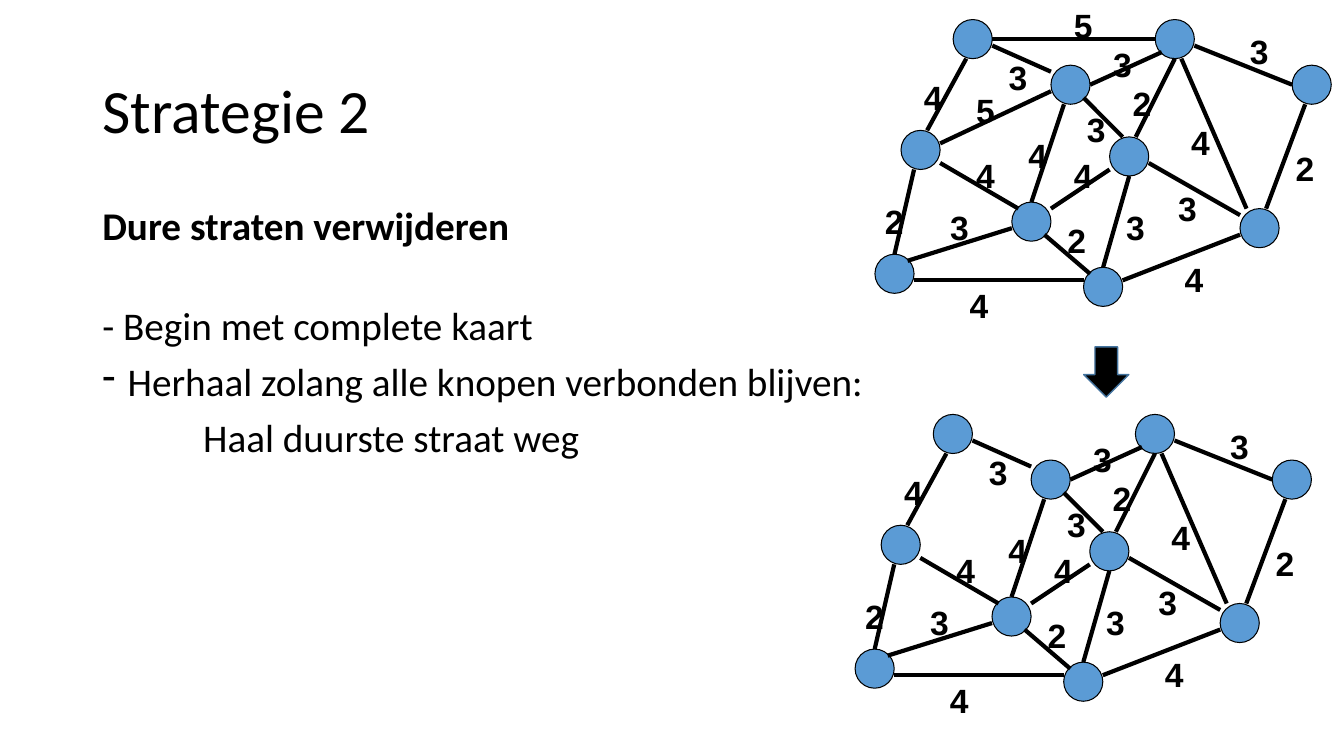
from lxml import etree
from pptx import Presentation
from pptx import util as u
from pptx.dml.color import RGBColor
from pptx.enum import shapes, text
from pptx.oxml import ns

BLACK = RGBColor(0x00, 0x00, 0x00)
BLUE = RGBColor(0x5B, 0x9B, 0xD5)
DARK_BLUE = RGBColor(0x43, 0x73, 0x9E)

UNIT = 11.5 / 70
NODE_SIZE = 6
LABEL_HEIGHT = 1.27
HIGHEST_COST = 5

NODES = [(12, 3), (43, 3), (64, 10), (36, 21), (27, 10),
         (4, 20), (0, 39), (21, 31), (32, 41), (56, 32)]

STREETS = [
    (3, (5, 40), (21, 35), (10, 31)),
    (4, (8, 20), (14, 9), (6, 11)),
    (2, (6, 26), (3, 39), (0, 30)),
    (4, (6, 43), (32, 43), (13, 43)),
    (2, (26, 36), (33, 42), (28, 33)),
    (5, (10, 22), (27, 14), (14, 13)),
    (3, (18, 7), (27, 11), (19, 8)),
    (5, (18, 6), (43, 6), (29, 0)),
    (3, (49, 7), (64, 13), (56, 4)),
    (3, (33, 13), (44, 8), (35, 6)),
    (4, (29, 16), (24, 31), (22, 20)),
    (4, (10, 25), (22, 32), (14, 23)),
    (3, (32, 15), (38, 21), (31, 16)),
    (4, (27, 32), (36, 26), (29, 23)),
    (3, (39, 27), (35, 41), (37, 31)),
    (4, (38, 43), (56, 36), (46, 39)),
    (3, (42, 25), (56, 33), (45, 28)),
    (4, (47, 9), (57, 32), (47, 18)),
    (2, (66, 16), (60, 32), (63, 22)),
    (2, (46, 9), (40, 21), (38, 12)),
]


def apply(target, values):
    for name, value in values.items():
        setattr(target, name, value)


class StrategySlide:
    title_font = {"name": "Calibri", "size": u.Pt(44)}
    body_font = {"name": "Calibri", "size": u.Pt(28)}
    label_font = {"name": "Arial", "size": u.Pt(24), "bold": True}
    label_frame = {"word_wrap": False, "auto_size": text.MSO_AUTO_SIZE.SHAPE_TO_FIT_TEXT}

    def __init__(self, page):
        self.page = page

    def text_box(self, parent, left, top, width, height, frame_format):
        box = parent.add_textbox(u.Cm(left), u.Cm(top), u.Cm(width), u.Cm(height))
        apply(box.text_frame, frame_format)
        return box.text_frame

    def fill_para(self, para, words, font, spacing=None, margin=0, bullet=None):
        apply(para, spacing or {})
        span = para.add_run()
        span.text = words
        apply(span.font, font)
        span.font.color.rgb = BLACK
        properties = para._p.get_or_add_pPr()
        properties.set("marL", str(u.Cm(margin)))
        properties.set("indent", str(-u.Cm(margin) if bullet else 0))
        if bullet:
            etree.SubElement(properties, ns.qn("a:buChar")).set("char", bullet)

    def shape(self, parent, kind, left, top, width, height, fill, line, weight):
        shape = parent.add_shape(kind, u.Cm(left), u.Cm(top), u.Cm(width), u.Cm(height))
        shape.shadow.inherit = False
        shape.fill.solid()
        shape.fill.fore_color.rgb = fill
        shape.line.color.rgb = line
        shape.line.width = u.Pt(weight)

    def street(self, parent, start, end):
        ends = [u.Cm(value) for value in (*start, *end)]
        street = parent.add_connector(shapes.MSO_CONNECTOR.STRAIGHT, *ends)
        street.line.color.rgb = BLACK
        street.line.width = u.Pt(3)
        etree.SubElement(street.element.spPr, ns.qn("a:effectLst"))

    def street_map(self, left, top, streets):
        def place(point):
            return left + point[0] * UNIT, top + point[1] * UNIT

        parent = self.page.shapes.add_group_shape().shapes
        size = NODE_SIZE * UNIT
        for node in NODES:
            self.shape(parent, shapes.MSO_SHAPE.OVAL, *place(node), size, size,
                       BLUE, BLACK, 0.75)
        for cost, start, end, label in streets:
            self.street(parent, place(start), place(end))
        for cost, start, end, label in streets:
            frame = self.text_box(parent, *place(label), size, LABEL_HEIGHT, self.label_frame)
            self.fill_para(frame.paragraphs[0], str(cost), self.label_font)

    def title(self, words):
        frame = self.text_box(self.page.shapes, 2.33, 1.02, 29.21, 3.68, {
            "word_wrap": True, "vertical_anchor": text.MSO_ANCHOR.MIDDLE})
        self.fill_para(frame.paragraphs[0], words, self.title_font, {"line_spacing": 0.9})

    def body(self, lines):
        frame = self.text_box(self.page.shapes, 2.33, 5.08, 29.21, 12.09, {"word_wrap": True})
        for index, (words, bold, before, margin, bullet) in enumerate(lines):
            para = frame.add_paragraph() if index else frame.paragraphs[0]
            self.fill_para(para, words, {**self.body_font, "bold": bold},
                           {"line_spacing": 0.9, "space_before": u.Pt(before)}, margin, bullet)


def main():
    deck = Presentation()
    apply(deck, {"slide_width": u.Cm(33.87), "slide_height": u.Cm(19.05)})
    slide = StrategySlide(deck.slides.add_slide(deck.slide_layouts[6]))
    slide.title("Strategie 2")
    slide.body([
        ("Dure straten verwijderen", True, 10, 0, None),
        ("- Begin met complete kaart", False, 41, 0, None),
        ("Herhaal zolang alle knopen verbonden blijven:", False, 10, 0.64, "-"),
        ("Haal duurste straat weg", False, 10, 2.54, None),
    ])
    slide.street_map(22.05, 0, STREETS)
    slide.street_map(21.55, 9.95, [street for street in STREETS if street[0] < HIGHEST_COST])
    slide.shape(slide.page.shapes, shapes.MSO_SHAPE.DOWN_ARROW, 27.31, 8.74, 1.14, 1.27,
                BLACK, DARK_BLUE, 1)
    deck.save("out.pptx")


if __name__ == "__main__":
    main()
